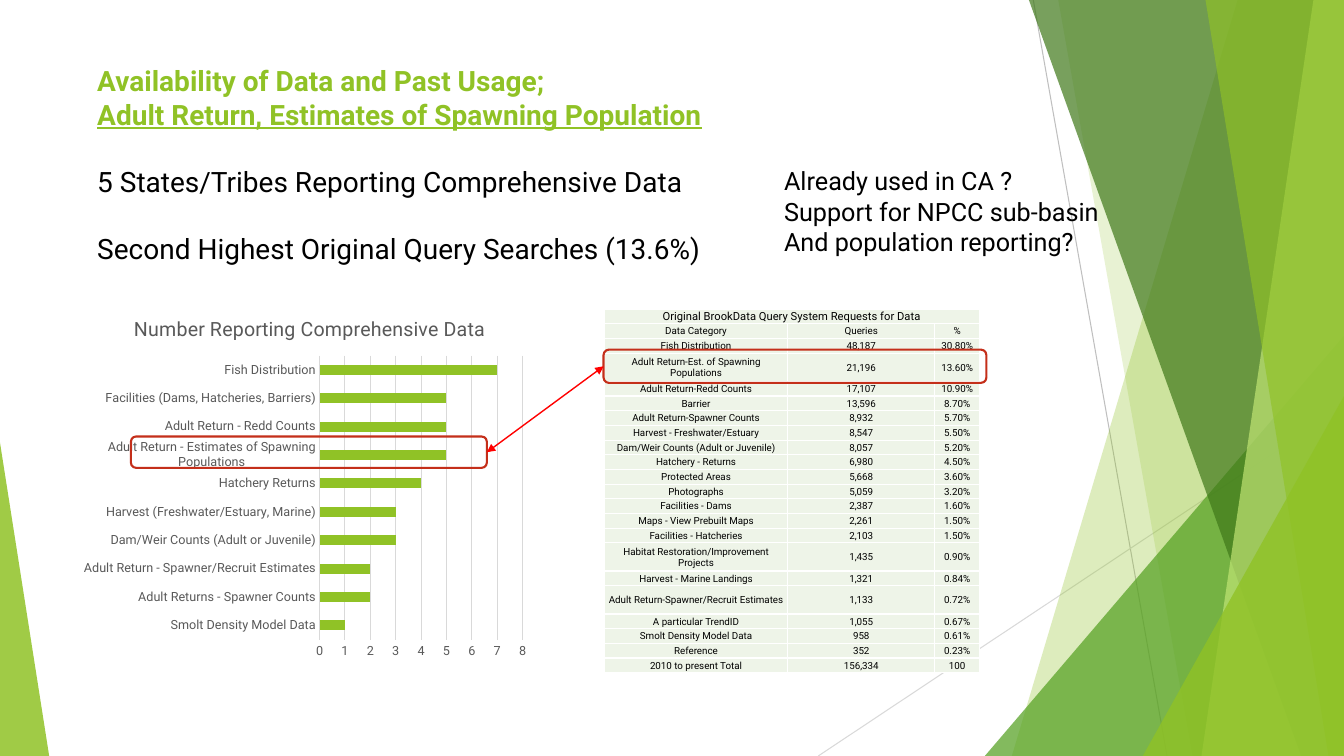
"""Build the slide on availability and past usage of adult return data."""
import typing

import lxml.etree
import pptx
import pptx.chart.data
import pptx.dml.color
import pptx.enum.chart
import pptx.enum.shapes
import pptx.enum.text
import pptx.oxml.ns
import pptx.util
from pptx.util import Cm

WIDTH, HEIGHT = 33.87, 19.05
qn, add_element = pptx.oxml.ns.qn, lxml.etree.SubElement
SHAPES = pptx.enum.shapes.MSO_SHAPE


class Theme(typing.NamedTuple):
    font: str = "Roboto"
    green: str = "90C226"
    mid_green: str = "54A021"
    dark_green: str = "3F7819"
    light_green: str = "C0E474"
    cell: str = "EEF4E8"
    white: str = "FFFFFF"
    black: str = "000000"
    grey: str = "595959"
    rule: str = "BFBFBF"
    grid: str = "D9D9D9"
    frame: str = "C42F1A"
    arrow: str = "FF0000"
    heading_size: int = 20
    note_size: int = 18
    chart_title_size: int = 14
    chart_size: int = 10
    axis_size: int = 9
    table_title_size: int = 8
    table_size: int = 7


class Box(typing.NamedTuple):
    left: float
    top: float
    width: float
    height: float


class Band(typing.NamedTuple):
    top_left: float
    bottom_left: float
    color: str
    opacity: int


class Wedge(typing.NamedTuple):
    box: Box
    apex: float
    color: str
    opacity: int


class Entry(typing.NamedTuple):
    text: str
    size: int
    color: str
    bold: bool = False
    underline: bool = False
    space_before: int = 0


THEME = Theme()
FACETS = [
    Band(31.19, 25.5, THEME.green, 30),
    Band(26.67, 30.05, THEME.green, 20),
    Wedge(Box(24.82, 8.46, 9.05, 10.59), 1, THEME.mid_green, 72),
    Band(25.93, 32.79, THEME.dark_green, 70),
    Band(33.1, 30.28, THEME.light_green, 70),
    Band(30.38, 33.48, THEME.green, 65),
    Wedge(Box(28.8, 9.98, 5.07, 9.07), 1, THEME.green, 80),
    Wedge(Box(0, 11.15, 1.24, 7.9), 0, THEME.green, 85),
]
HEADING = [
    Entry("Availability of Data and Past Usage;", THEME.heading_size, THEME.green, True),
    Entry("Adult Return, Estimates of Spawning Population", THEME.heading_size, THEME.green, True, True),
    Entry("5 States/Tribes Reporting Comprehensive Data", THEME.heading_size, THEME.black, space_before=24),
    Entry("Second Highest Original Query Searches (13.6%)", THEME.heading_size, THEME.black, space_before=24),
]
NOTES = [Entry(text, THEME.note_size, THEME.black) for text in (
    "Already used in CA ?", "Support for NPCC sub-basin", "And population reporting?")]
REPORTING = {
    "Smolt Density Model Data": 1, "Adult Returns - Spawner Counts": 2,
    "Adult Return - Spawner/Recruit Estimates": 2, "Dam/Weir Counts (Adult or Juvenile)": 3,
    "Harvest (Freshwater/Estuary, Marine)": 3, "Hatchery Returns": 4,
    "Adult Return - Estimates of Spawning Populations": 5, "Adult Return - Redd Counts": 5,
    "Facilities (Dams, Hatcheries, Barriers)": 5, "Fish Distribution": 7,
}
QUERIES = [
    ("Original BrookData Query System Requests for Data", "", ""), ("Data Category", "Queries", "%"),
    ("Fish Distribution", "48,187", "30.80%"), ("Adult Return-Est. of Spawning Populations", "21,196", "13.60%"),
    ("Adult Return-Redd Counts", "17,107", "10.90%"), ("Barrier", "13,596", "8.70%"),
    ("Adult Return-Spawner Counts", "8,932", "5.70%"), ("Harvest - Freshwater/Estuary", "8,547", "5.50%"),
    ("Dam/Weir Counts (Adult or Juvenile)", "8,057", "5.20%"), ("Hatchery - Returns", "6,980", "4.50%"),
    ("Protected Areas", "5,668", "3.60%"), ("Photographs", "5,059", "3.20%"),
    ("Facilities - Dams", "2,387", "1.60%"), ("Maps - View Prebuilt Maps", "2,261", "1.50%"),
    ("Facilities - Hatcheries", "2,103", "1.50%"), ("Habitat Restoration/Improvement Projects", "1,435", "0.90%"),
    ("Harvest - Marine Landings", "1,321", "0.84%"), ("Adult Return-Spawner/Recruit Estimates", "1,133", "0.72%"),
    ("A particular TrendID", "1,055", "0.67%"), ("Smolt Density Model Data", "958", "0.61%"),
    ("Reference", "352", "0.23%"), ("2010 to present Total", "156,334", "100"),
]
COLUMN_WIDTHS, TALL_ROWS = (4.62, 3.71, 1.12), (3, 15, 17)


def style_font(font, size: int, color: str) -> None:
    font.name, font.size = THEME.font, pptx.util.Pt(size)
    font.color.rgb = pptx.dml.color.RGBColor.from_string(color)


def style_line(line, color: str, weight: float) -> None:
    line.color.rgb, line.width = pptx.dml.color.RGBColor.from_string(color), pptx.util.Pt(weight)


def style_fill(fill, color: str) -> None:
    fill.solid()
    fill.fore_color.rgb = pptx.dml.color.RGBColor.from_string(color)


def add_facet(slide, facet: Band | Wedge) -> None:
    if isinstance(facet, Band):
        builder = slide.shapes.build_freeform(Cm(facet.top_left), 0)
        corners = [(WIDTH, 0), (WIDTH, HEIGHT), (facet.bottom_left, HEIGHT)]
        builder.add_line_segments([(Cm(x), Cm(y)) for x, y in corners])
        shape = builder.convert_to_shape()
    else:
        shape = slide.shapes.add_shape(SHAPES.ISOSCELES_TRIANGLE, *map(Cm, facet.box))
        shape.adjustments[0] = facet.apex
    shape.shadow.inherit = False
    style_fill(shape.fill, facet.color)
    shape.line.fill.background()
    color = shape.element.spPr.find(qn("a:solidFill")).find(qn("a:srgbClr"))
    add_element(color, qn("a:alpha"), val=str(facet.opacity * 1000))


def add_line(slide, ends: tuple[float, ...], color: str, weight: float):
    connector = slide.shapes.add_connector(pptx.enum.shapes.MSO_CONNECTOR.STRAIGHT, *map(Cm, ends))
    style_line(connector.line, color, weight)
    add_element(connector.element.spPr, qn("a:effectLst"))
    return connector


def add_text(slide, box: Box, entries: list[Entry], wrap: bool) -> None:
    frame = slide.shapes.add_textbox(*map(Cm, box)).text_frame
    frame.word_wrap = wrap
    frame.text = "\n".join(entry.text for entry in entries)
    for paragraph, entry in zip(frame.paragraphs, entries):
        paragraph.space_before = pptx.util.Pt(entry.space_before)
        font = paragraph.runs[0].font
        style_font(font, entry.size, entry.color)
        font.bold, font.underline = entry.bold, entry.underline


def fill_cell(cell, text: str, size: int) -> None:
    cell.text_frame.text = text
    cell.vertical_anchor = pptx.enum.text.MSO_ANCHOR.MIDDLE
    cell.margin_left = cell.margin_right = cell.margin_top = Cm(0.02)
    cell.margin_bottom = 0
    paragraph = cell.text_frame.paragraphs[0]
    paragraph.alignment = pptx.enum.text.PP_ALIGN.CENTER
    for run in paragraph.runs:
        style_font(run.font, size, THEME.black)
    style_fill(cell.fill, THEME.cell)
    properties = cell._tc.get_or_add_tcPr()
    for index, side in enumerate(("a:lnL", "a:lnR", "a:lnT", "a:lnB")):
        border = lxml.etree.Element(qn(side), w="12700")
        add_element(add_element(border, qn("a:solidFill")), qn("a:srgbClr"), val=THEME.white)
        properties.insert(index, border)


def add_query_table(slide, box: Box) -> None:
    table = slide.shapes.add_table(len(QUERIES), len(COLUMN_WIDTHS), *map(Cm, box)).table
    table.first_row = table.horz_banding = False
    for column, width in zip(table.columns, COLUMN_WIDTHS):
        column.width = Cm(width)
    for index, values in enumerate(QUERIES):
        table.rows[index].height = Cm(0.71 if index in TALL_ROWS else 0.37)
        for column, text in enumerate(values):
            fill_cell(table.cell(index, column), text, THEME.table_size if index else THEME.table_title_size)
    table.cell(0, 0).merge(table.cell(0, 2))


def place_in_chart(element, **fractions: float) -> None:
    layout = element.find(qn("c:layout"))
    if layout is None:
        layout = lxml.etree.Element(qn("c:layout"))
        element.insert(0 if element.find(qn("c:tx")) is None else 1, layout)
    manual = add_element(layout, qn("c:manualLayout"))
    settings = {"layoutTarget": "inner"} if "w" in fractions else {}
    for name, value in (settings | {"xMode": "edge", "yMode": "edge"} | fractions).items():
        add_element(manual, qn(f"c:{name}"), val=str(value))


def add_reporting_chart(slide, box: Box) -> None:
    data = pptx.chart.data.CategoryChartData()
    data.categories = list(REPORTING)
    data.add_series("Series 1", list(REPORTING.values()))
    chart = slide.shapes.add_chart(pptx.enum.chart.XL_CHART_TYPE.BAR_CLUSTERED, *map(Cm, box), data).chart
    style_font(chart.font, THEME.chart_size, THEME.black)
    chart.has_legend = False
    title = chart.chart_title
    title.text_frame.text = "Number Reporting Comprehensive Data"
    title_font = title.text_frame.paragraphs[0].runs[0].font
    style_font(title_font, THEME.chart_title_size, THEME.grey)
    title_font.bold = False
    place_in_chart(title.element, x=0.12, y=0.03)
    place_in_chart(chart.element.find(".//" + qn("c:plotArea")), x=0.53, y=0.15, w=0.44, h=0.78)
    plot, categories, values = chart.plots[0], chart.category_axis, chart.value_axis
    plot.gap_width, plot.vary_by_categories = 182, False
    style_fill(plot.series[0].format.fill, THEME.green)
    for axis in (categories, values):
        axis.major_tick_mark = axis.minor_tick_mark = pptx.enum.chart.XL_TICK_MARK.NONE
        style_font(axis.tick_labels.font, THEME.axis_size, THEME.grey)
    style_line(categories.format.line, THEME.grid, 0.75)
    values.minimum_scale, values.maximum_scale, values.major_unit = 0, 8, 1
    values.format.line.fill.background()
    style_line(values.major_gridlines.format.line, THEME.grid, 0.75)


def add_frame(slide, box: Box):
    shape = slide.shapes.add_shape(SHAPES.ROUNDED_RECTANGLE, *map(Cm, box))
    shape.shadow.inherit = False
    shape.fill.background()
    style_line(shape.line, THEME.frame, 1.5)
    return shape


def main() -> None:
    presentation = pptx.Presentation()
    presentation.slide_width, presentation.slide_height = Cm(WIDTH), Cm(HEIGHT)
    slide = presentation.slides.add_slide(presentation.slide_layouts[6])
    add_line(slide, (26.04, 0, 29.41, HEIGHT), THEME.rule, 0.75)
    add_line(slide, (WIDTH, 10.24, 20.62, HEIGHT), THEME.grid, 0.75)
    for facet in FACETS:
        add_facet(slide, facet)
    add_text(slide, Box(2.2, 1.48, 23.88, 5.4), HEADING, True)
    add_query_table(slide, Box(15.23, 7.79, 9.45, 9.16))
    add_reporting_chart(slide, Box(1.89, 7.59, 11.63, 9.17))
    table_frame = add_frame(slide, Box(15.21, 8.81, 9.65, 0.84))
    chart_frame = add_frame(slide, Box(3.3, 11, 8.97, 0.79))
    arrow = add_line(slide, (12.27, 11.4, 15.21, 9.23), THEME.arrow, 1)
    arrow.begin_connect(chart_frame, 3)
    arrow.end_connect(table_frame, 1)
    for end in ("a:headEnd", "a:tailEnd"):
        add_element(arrow.element.spPr.find(qn("a:ln")), qn(end), type="triangle")
    add_text(slide, Box(19.51, 4.05, 8.53, 2.57), NOTES, False)
    presentation.save("out.pptx")


if __name__ == "__main__":
    main()
